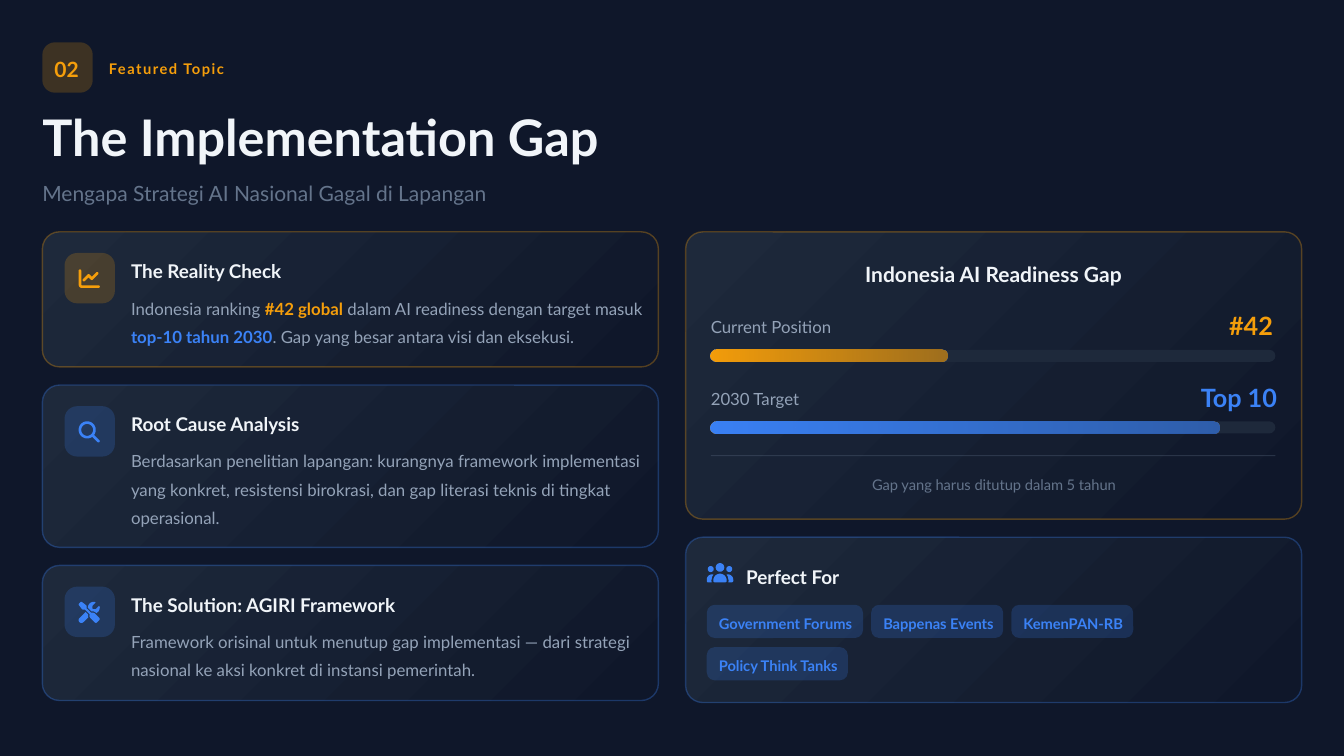
from dataclasses import dataclass
from math import cos, radians, sin

from lxml import etree
from pptx import Presentation
from pptx.dml.color import RGBColor
from pptx.enum.shapes import MSO_CONNECTOR, MSO_SHAPE
from pptx.enum.text import MSO_ANCHOR, PP_ALIGN
from pptx.oxml.ns import qn
from pptx.slide import Slide
from pptx.util import Inches, Pt

ROUND = MSO_SHAPE.ROUNDED_RECTANGLE
STRAIGHT = MSO_CONNECTOR.STRAIGHT
MIDDLE = MSO_ANCHOR.MIDDLE
LEFT, CENTER = PP_ALIGN.LEFT, PP_ALIGN.CENTER

Box = tuple[float, float, float, float]
Points = list[tuple[float, float]]
Runs = list[tuple[str, str, bool]]


@dataclass(frozen=True)
class Theme:
    font: str = "Lato"
    night: str = "0F172A"
    slate: str = "1E293B"
    white: str = "F1F5F9"
    soft: str = "94A3B8"
    dim: str = "64748B"
    amber: str = "F59E0B"
    blue: str = "3B82F6"
    title: float = 36
    score: float = 18
    lead: float = 15
    head: float = 13.5
    body: float = 12
    small: float = 10.5


@dataclass(frozen=True)
class Card:
    head: str
    runs: Runs
    height: float
    color: str
    icon: list[Points]


@dataclass(frozen=True)
class Meter:
    label: str
    score: str
    left: float
    width: float
    fill: float
    color: str


@dataclass(frozen=True)
class Chip:
    text: str
    width: float


THEME = Theme()


def arc(x: float, y: float, r: float, start: float, end: float) -> Points:
    steps = max(4, round(abs(end - start) / 10))
    turns = [radians(start + (end - start) * i / steps) for i in range(steps + 1)]
    return [(x + r * cos(t), y + r * sin(t)) for t in turns]


def flip(points: Points) -> Points:
    return [(640 - x, y) for x, y in points]


TREND = [
    arc(32, 64, 32, 180, 360) + arc(80, 400, 16, 180, 90)
    + arc(480, 448, 32, -90, 90) + arc(80, 400, 80, 90, 180),
    arc(448, 128, 32, -135, 45) + arc(320, 256, 32, 45, 135) + [(240, 221)]
    + arc(128, 288, 32, 45, 225) + arc(240, 176, 32, 225, 315) + [(320, 211)],
]
SEARCH = [
    arc(208, 208, 208, 54, 396) + arc(480, 480, 32, -45, 135),
    arc(208, 208, 144, 360, 0),
]
TOOLS = [
    [(79, 5), (62, 0), (47, 7), (7, 47), (0, 62), (5, 79), (85, 183), (104, 192),
     (158, 192), (267, 301), (262, 350), (281, 391), (393, 503), (416, 512),
     (439, 503), (503, 439), (512, 416), (503, 393), (391, 281), (350, 262),
     (301, 267), (192, 158), (192, 104), (183, 85)],
    arc(68, 444, 68, 45, 225) + [(168, 248), (230, 309), (227, 342), (234, 374)],
    [(512, 144), (509, 114), (499, 102), (485, 108), (421, 171), (409, 176)]
    + arc(352, 160, 16, 90, 180) + [(336, 103), (341, 91), (405, 27), (410, 13),
     (399, 3)] + arc(368, 144, 144, 270, 180)
    + [(309, 230), (364, 231), (413, 259), (429, 275), (476, 239), (503, 192)],
]
FRIEND = arc(96, 160, 72, 0, 360)
BUST = (arc(128, 416, 128, 180, 286) + [(132, 340), (112, 432), (112, 448), (119, 480)]
        + arc(32, 448, 32, 90, 180))
CROWD = [
    arc(320, 120, 104, 0, 360), FRIEND, flip(FRIEND), BUST, flip(BUST),
    arc(320, 432, 160, 180, 360) + arc(448, 448, 32, 0, 90)
    + arc(192, 448, 32, 90, 180),
]

CARDS = [
    Card("The Reality Check", [
        ("Indonesia ranking ", THEME.soft, False),
        ("#42 global", THEME.amber, True),
        (" dalam AI readiness dengan target masuk ", THEME.soft, False),
        ("top-10 tahun 2030", THEME.blue, True),
        (". Gap yang besar antara visi dan eksekusi.", THEME.soft, False),
    ], 1.34, THEME.amber, TREND),
    Card("Root Cause Analysis", [
        ("Berdasarkan penelitian lapangan: kurangnya framework implementasi yang "
         "konkret, resistensi birokrasi, dan gap literasi teknis di tingkat "
         "operasional.", THEME.soft, False),
    ], 1.61, THEME.blue, SEARCH),
    Card("The Solution: AGIRI Framework", [
        ("Framework orisinal untuk menutup gap implementasi — dari strategi "
         "nasional ke aksi konkret di instansi pemerintah.", THEME.soft, False),
    ], 1.34, THEME.blue, TOOLS),
]
METERS = [
    Meter("Current Position", "#42", 12.19, 0.59, 2.35, THEME.amber),
    Meter("2030 Target", "Top 10", 11.91, 0.86, 5.04, THEME.blue),
]
CHIPS = [
    [Chip("Government Forums", 1.55), Chip("Bappenas Events", 1.31),
     Chip("KemenPAN-RB", 1.21)],
    [Chip("Policy Think Tanks", 1.4)],
]


def tint(code: str) -> RGBColor:
    return RGBColor.from_string(code)


def fade(shape, share: int) -> None:
    last = list(shape._element.spPr.iter(qn("a:srgbClr")))[-1]
    etree.SubElement(last, qn("a:alpha")).set("val", str(share * 1000))


def write(slide: Slide, box: Box, text: str | Runs, size: float,
          color: str = THEME.white, bold: bool = False, space: float = 1.2,
          align: PP_ALIGN = LEFT, track: int = 0, pad: float = 0) -> None:
    frame = slide.shapes.add_textbox(*map(Inches, box)).text_frame
    frame.word_wrap = True
    frame.vertical_anchor = MIDDLE
    frame.margin_left = frame.margin_right = Inches(pad)
    frame.margin_top = frame.margin_bottom = Inches(pad / 2)
    line = frame.paragraphs[0]
    line.alignment = align
    line.line_spacing = space
    for words, shade, heavy in [(text, color, bold)] if isinstance(text, str) else text:
        run = line.add_run()
        run.text = words
        run.font.name = THEME.font
        run.font.size = Pt(size)
        run.font.bold = heavy
        run.font.color.rgb = tint(shade)
        if track:
            run.font._element.set("spc", str(track))


def block(slide: Slide, box: Box, radius: float, color: str, end: str = "",
          angle: float = 0, alpha: int = 100):
    shape = slide.shapes.add_shape(ROUND, *map(Inches, box))
    shape.adjustments[0] = radius / min(box[2:])
    shape.shadow.inherit = False
    shape.line.fill.background()
    if end:
        shape.fill.gradient()
        shape.fill.gradient_angle = angle
        for stop, shade in zip(shape.fill.gradient_stops, (color, end)):
            stop.color.rgb = tint(shade)
    else:
        shape.fill.solid()
        shape.fill.fore_color.rgb = tint(color)
    if alpha < 100:
        fade(shape, alpha)
    return shape


def panel(slide: Slide, box: Box, color: str) -> None:
    shape = block(slide, box, 0.17, THEME.slate, THEME.night, 315)
    shape.line.width = Pt(1)
    shape.line.color.rgb = tint(color)
    fade(shape, 30)


def draw_icon(slide: Slide, x: float, y: float, parts: list[Points], color: str) -> None:
    pen = slide.shapes.build_freeform(*parts[0][0], scale=Inches(0.21) / 512)
    for i, points in enumerate(parts):
        if i:
            pen.move_to(*points[0])
        pen.add_line_segments(points[1:], close=True)
    shape = pen.convert_to_shape(Inches(x), Inches(y))
    shape.shadow.inherit = False
    shape.line.fill.background()
    shape.fill.solid()
    shape.fill.fore_color.rgb = tint(color)


def draw_card(slide: Slide, top: float, card: Card) -> None:
    panel(slide, (0.42, top, 6.11, card.height), card.color)
    block(slide, (0.64, top + 0.21, 0.5, 0.5), 0.125, card.color, alpha=20)
    draw_icon(slide, 0.78, top + 0.36, card.icon, card.color)
    write(slide, (1.3, top + 0.21, 5.11, 0.29), card.head, THEME.head, bold=True, space=1.3)
    write(slide, (1.3, top + 0.59, 5.1, card.height - 0.8), card.runs, THEME.body, space=1.4)


def draw_meter(slide: Slide, top: float, meter: Meter) -> None:
    write(slide, (7.05, top + 0.04, 1.24, 0.25), meter.label, THEME.body, THEME.soft, space=1.3)
    write(slide, (meter.left, top, meter.width, 0.33), meter.score, THEME.score,
          meter.color, True, 1.1)
    block(slide, (7.05, top + 0.42, 5.6, 0.12), 0.06, THEME.slate)
    block(slide, (7.05, top + 0.42, meter.fill, 0.12), 0.06, meter.color, meter.color, alpha=60)


def draw_chip(slide: Slide, x: float, y: float, chip: Chip) -> None:
    block(slide, (x, y, chip.width, 0.33), 0.08, THEME.blue, alpha=20)
    write(slide, (x, y, chip.width + 0.07, 0.33), chip.text, THEME.small, THEME.blue, True, pad=0.12)


def draw_rule(slide: Slide, x: float, y: float, width: float) -> None:
    rule = slide.shapes.add_connector(STRAIGHT, *map(Inches, (x, y, x + width, y)))
    rule.line.width = Pt(0.75)
    rule.line.color.rgb = tint(THEME.dim)
    fade(rule, 30)
    etree.SubElement(rule._element.spPr, qn("a:effectLst"))


def main() -> None:
    deck = Presentation()
    deck.slide_width, deck.slide_height = Inches(13.33), Inches(7.5)
    slide = deck.slides.add_slide(deck.slide_layouts[6])
    slide.background.fill.solid()
    slide.background.fill.fore_color.rgb = tint(THEME.night)

    block(slide, (0.42, 0.42, 0.5, 0.5), 0.125, THEME.amber, alpha=20)
    write(slide, (0.54, 0.52, 0.35, 0.29), "02", THEME.lead, THEME.amber, True)
    write(slide, (1.08, 0.56, 1.4, 0.21), "Featured Topic", THEME.small, THEME.amber, True, track=110)
    write(slide, (0.42, 1.04, 12.75, 0.62), "The Implementation Gap", THEME.title, bold=True, space=1.0)
    write(slide, (0.42, 1.75, 12.6, 0.29), "Mengapa Strategi AI Nasional Gagal di Lapangan",
          THEME.lead, THEME.dim)

    top = 2.3
    for card in CARDS:
        draw_card(slide, top, card)
        top += card.height + 0.18

    panel(slide, (6.8, 2.3, 6.11, 2.85), THEME.amber)
    write(slide, (7, 2.55, 5.71, 0.29), "Indonesia AI Readiness Gap", THEME.lead, bold=True, align=CENTER)
    for i, meter in enumerate(METERS):
        draw_meter(slide, 3.05 + 0.71 * i, meter)
    draw_rule(slide, 7.05, 4.52, 5.6)
    write(slide, (7.02, 4.69, 5.68, 0.21), "Gap yang harus ditutup dalam 5 tahun",
          THEME.small, THEME.dim, align=CENTER)

    panel(slide, (6.8, 5.33, 6.11, 1.64), THEME.blue)
    draw_icon(slide, 7.01, 5.58, CROWD, THEME.blue)
    write(slide, (7.4, 5.54, 1.01, 0.29), "Perfect For", THEME.head, bold=True, space=1.3)
    for i, row in enumerate(CHIPS):
        x = 7.01
        for chip in row:
            draw_chip(slide, x, 6 + 0.42 * i, chip)
            x += chip.width + 0.08
    deck.save("out.pptx")


if __name__ == "__main__":
    main()
